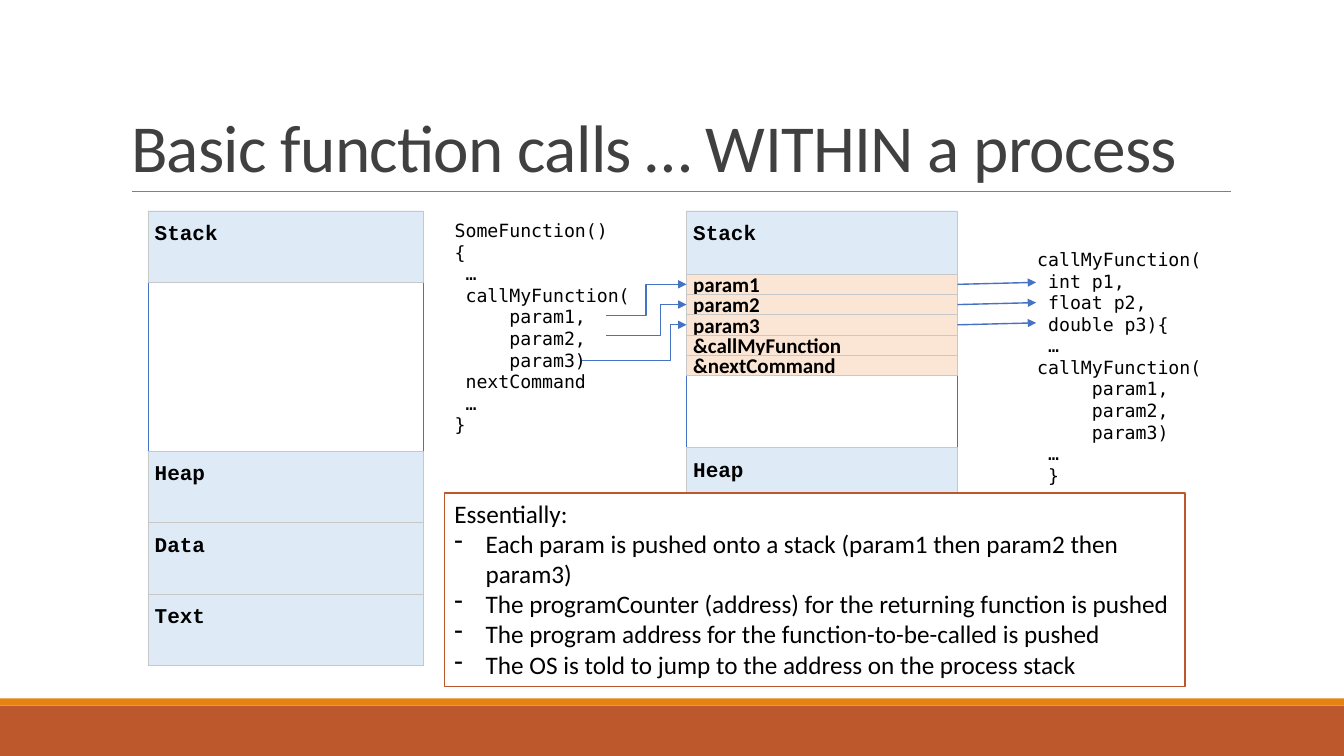
from dataclasses import dataclass

from lxml import etree
from pptx import Presentation
from pptx.dml.color import RGBColor
from pptx.enum.shapes import MSO_CONNECTOR, MSO_SHAPE
from pptx.enum.text import MSO_ANCHOR, MSO_AUTO_SIZE, PP_ALIGN
from pptx.oxml.ns import qn
from pptx.util import Cm, Pt

RECTANGLE = MSO_SHAPE.RECTANGLE
STRAIGHT, ELBOW = MSO_CONNECTOR.STRAIGHT, MSO_CONNECTOR.ELBOW
TOP, MIDDLE, BOTTOM = MSO_ANCHOR.TOP, MSO_ANCHOR.MIDDLE, MSO_ANCHOR.BOTTOM
LEFT = PP_ALIGN.LEFT
NO_FIT = MSO_AUTO_SIZE.NONE
TITLE_ONLY = 5

BLUE, PALE_BLUE, PEACH, GRID = "4672C4", "DEEBF6", "FBE5D5", "C8C8C8"
RUST, ORANGE, WHITE, BLACK = "BD582C", "E48312", "FFFFFF", "000000"
ROW_HEIGHT = 0.51
FRAMES_TOP = 6.91

CALLER = """SomeFunction()
{
 …
 callMyFunction(
     param1,
     param2,
     param3)
 nextCommand
 …
}"""
CALLEE = """callMyFunction(
 int p1,
 float p2,
 double p3){
 …
callMyFunction(
     param1,
     param2,
     param3)
 …
 }"""
STACK_ROWS = ["param1", "param2", "param3", "&callMyFunction", "&nextCommand"]
STEPS = [
    "Each param is pushed onto a stack (param1 then param2 then param3)",
    "The programCounter (address) for the returning function is pushed",
    "The program address for the function-to-be-called is pushed",
    "The OS is told to jump to the address on the process stack",
]


@dataclass
class Box:
    """Position and size in centimetres."""
    left: float
    top: float
    width: float
    height: float

    def lengths(self):
        return Cm(self.left), Cm(self.top), Cm(self.width), Cm(self.height)


@dataclass
class Memory:
    """A process memory column and its labelled segments."""
    outline: Box
    segment_height: float
    segments: dict[str, float]


@dataclass
class Argument:
    """Where a parameter arrow leaves the caller and where it bends."""
    left: float
    top: float
    bend: float


MEMORIES = [
    Memory(Box(3.73, 5.31, 6.93, 11.46), 1.8,
           {"Stack": 5.31, "Heap": 11.37, "Data": 13.17, "Text": 14.97}),
    Memory(Box(17.3, 5.38, 6.83, 11.28), 1.78, {"Stack": 5.31, "Heap": 11.28}),
]
ARGUMENTS = [Argument(15.27, 7.95, 16.28), Argument(15.27, 8.46, 16.64),
             Argument(14.68, 9.09, 16.89)]


def colour(value: str) -> RGBColor:
    return RGBColor.from_string(value)


def write(frame, lines: list[str], *, size: float, font: str = "Calibri", color: str = BLACK,
          bold: bool = False, spacing=None, anchor=TOP, wrap: bool = True,
          insets: tuple[float, float] | None = None) -> None:
    """Fill a text frame; insets are left and top in centimetres."""
    frame.auto_size = NO_FIT
    frame.word_wrap = wrap
    frame.vertical_anchor = anchor
    if insets:
        frame.margin_left, frame.margin_top = Cm(insets[0]), Cm(insets[1])
        frame.margin_right = frame.margin_bottom = 0
    for number, line in enumerate(lines):
        paragraph = frame.add_paragraph() if number else frame.paragraphs[0]
        paragraph.alignment = LEFT
        if spacing:
            paragraph.line_spacing = spacing
        run = paragraph.add_run()
        run.text = line
        run.font.name, run.font.size, run.font.bold = font, Pt(size), bold
        run.font.color.rgb = colour(color)


def add_box(slide, box: Box, fill: str, line: str | None = None, line_width: float = 0.25):
    shape = slide.shapes.add_shape(RECTANGLE, *box.lengths())
    shape.shadow.inherit = False
    shape.fill.solid()
    shape.fill.fore_color.rgb = colour(fill)
    if line:
        shape.line.color.rgb = colour(line)
        shape.line.width = Pt(line_width)
    else:
        shape.line.fill.background()
    return shape


def add_line(slide, start: tuple[float, float], end: tuple[float, float], color: str = BLUE,
             width: float = 1, arrow: bool = True, bend: float | None = None) -> None:
    """Draw a line; bend is the x of the vertical part of an elbow."""
    kind = STRAIGHT if bend is None else ELBOW
    connector = slide.shapes.add_connector(kind, *(Cm(value) for value in start + end))
    connector.line.color.rgb = colour(color)
    connector.line.width = Pt(width)
    properties = connector._element.spPr
    if arrow:
        etree.SubElement(properties.find(qn("a:ln")), qn("a:tailEnd"), type="triangle")
    etree.SubElement(properties, qn("a:effectLst"))
    if bend is not None:
        share = round((bend - start[0]) / (end[0] - start[0]) * 100000)
        guides = properties.find(qn("a:prstGeom")).get_or_add_avLst()
        etree.SubElement(guides, qn("a:gd"), name="adj1", fmla=f"val {share}")


def add_code(slide, box: Box, code: str) -> None:
    listing = slide.shapes.add_textbox(*box.lengths())
    write(listing.text_frame, code.split("\n"), size=13, font="DejaVu Sans Mono",
          spacing=Pt(15.4), wrap=False, insets=(0, 0))


def add_memory(slide, memory: Memory) -> None:
    outline = memory.outline
    add_box(slide, outline, WHITE, BLUE)
    for name, top in memory.segments.items():
        segment = add_box(slide, Box(outline.left, top, outline.width, memory.segment_height),
                          PALE_BLUE, GRID)
        write(segment.text_frame, [name], size=15, font="Courier New", bold=True,
              insets=(0.17, 0.22))


def add_title(slide, text: str) -> None:
    title = slide.shapes.title
    title.left, title.top, title.width, title.height = Box(3.05, 0.79, 27.94, 4.04).lengths()
    write(title.text_frame, [text], size=48, color="404040", spacing=0.85, anchor=BOTTOM)
    title.text_frame.paragraphs[0].runs[0].font._element.set("spc", "-50")
    add_line(slide, (3.33, 4.83), (31.01, 4.83), "808080", 0.5, arrow=False)


def add_summary(slide) -> None:
    summary = add_box(slide, Box(11.2, 12.42, 18.67, 4.88), WHITE, RUST, 1.25)
    write(summary.text_frame, ["Essentially:", *STEPS], size=18)
    for step in summary.text_frame.paragraphs[1:]:
        properties = step._p.get_or_add_pPr()
        properties.set("marL", str(Cm(0.79)))
        properties.set("indent", str(-Cm(0.79)))
        etree.SubElement(properties, qn("a:buChar"), char="-")


def main() -> None:
    deck = Presentation()
    deck.slide_width, deck.slide_height = Cm(33.87), Cm(19.05)
    slide = deck.slides.add_slide(deck.slide_layouts[TITLE_ONLY])

    add_box(slide, Box(0, 17.78, 33.87, 1.27), RUST)
    add_box(slide, Box(0, 17.6, 33.87, 0.18), ORANGE)
    add_title(slide, "Basic function calls … WITHIN a process")

    add_code(slide, Box(11.46, 5.54, 4.6, 5.5), CALLER)
    for memory in MEMORIES:
        add_memory(slide, memory)
    stack = MEMORIES[1].outline
    for number, label in enumerate(STACK_ROWS):
        top = FRAMES_TOP + number * ROW_HEIGHT
        row = add_box(slide, Box(stack.left, top, stack.width, ROW_HEIGHT), PEACH, GRID)
        write(row.text_frame, [label], size=15, bold=True, anchor=MIDDLE, insets=(0.17, 0))
    add_code(slide, Box(26.14, 6.27, 4.6, 6), CALLEE)

    for number, argument in enumerate(ARGUMENTS):
        middle = FRAMES_TOP + (number + 0.5) * ROW_HEIGHT
        add_line(slide, (argument.left, argument.top), (stack.left, middle), bend=argument.bend)
        add_line(slide, (stack.left + stack.width, middle), (26.11, middle - 0.05))

    add_summary(slide)
    deck.save("out.pptx")


if __name__ == "__main__":
    main()
